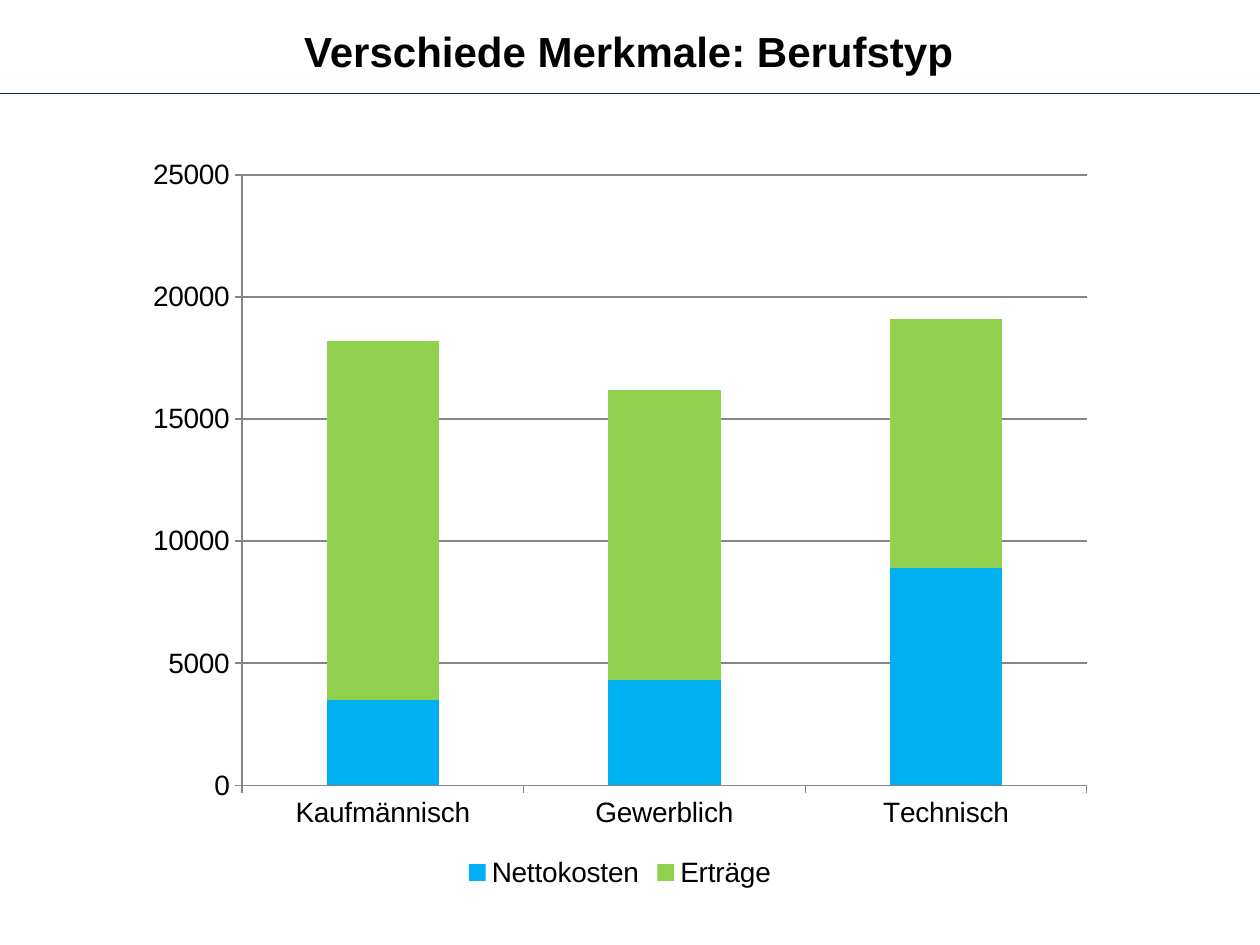
from dataclasses import dataclass

from lxml.etree import SubElement
from pptx import Presentation
from pptx.chart.data import CategoryChartData
from pptx.dml.color import RGBColor
from pptx.enum.chart import XL_CHART_TYPE, XL_LEGEND_POSITION, XL_TICK_MARK
from pptx.enum.shapes import MSO_CONNECTOR
from pptx.enum.text import MSO_ANCHOR, PP_ALIGN
from pptx.oxml.ns import qn
from pptx.util import Inches, Pt

TITLE = "Verschiede Merkmale: Berufstyp"
CATEGORIES = ["Kaufmännisch", "Gewerblich", "Technisch"]
SERIES = [
    ("Nettokosten", [3500, 4300, 8900], "00B0F0"),
    ("Erträge", [14700, 11900, 10200], "92D050"),
]
AXIS_TOP, AXIS_STEP = 25000, 5000

WIDTH, HEIGHT = 10, 7.5
TITLE_AREA = (0.66, 0.16, 8.66, 0.48)
CHART_AREA = (1.06, 1.15, 7.72, 5.94)
RULE_TOP = 0.74


@dataclass(frozen=True)
class Theme:
    font: str = "Arial"
    title_size: int = 24
    chart_size: int = 16
    text: str = "000000"
    rule: str = "142A56"
    grid: str = "868686"
    line_width: float = 0.75


THEME = Theme()


def set_font(font, size, bold=False):
    font.name = THEME.font
    font.size = Pt(size)
    font.bold = bold
    font.color.rgb = RGBColor.from_string(THEME.text)


def set_line(line, color):
    line.color.rgb = RGBColor.from_string(color)
    line.width = Pt(THEME.line_width)


def add_title(page):
    box = page.shapes.add_textbox(*map(Inches, TITLE_AREA))
    frame = box.text_frame
    frame.word_wrap = True
    frame.vertical_anchor = MSO_ANCHOR.MIDDLE
    paragraph = frame.paragraphs[0]
    paragraph.text = TITLE
    paragraph.alignment = PP_ALIGN.CENTER
    set_font(paragraph.font, THEME.title_size, bold=True)


def add_rule(page):
    top = Inches(RULE_TOP)
    rule = page.shapes.add_connector(
        MSO_CONNECTOR.STRAIGHT, 0, top, Inches(WIDTH), top
    )
    set_line(rule.line, THEME.rule)
    SubElement(rule.element.spPr, qn("a:effectLst"))


def add_cost_chart(page):
    data = CategoryChartData()
    data.categories = CATEGORIES
    for name, values, _ in SERIES:
        data.add_series(name, values)
    chart = page.shapes.add_chart(
        XL_CHART_TYPE.COLUMN_STACKED, *map(Inches, CHART_AREA), data
    ).chart
    chart.has_title = False
    set_font(chart.font, THEME.chart_size)

    plot = chart.plots[0]
    plot.gap_width, plot.overlap = 150, 100
    plot.vary_by_categories = False
    for series, (_, _, color) in zip(plot.series, SERIES):
        series.format.fill.solid()
        series.format.fill.fore_color.rgb = RGBColor.from_string(color)

    for axis in (chart.category_axis, chart.value_axis):
        axis.major_tick_mark = XL_TICK_MARK.OUTSIDE
        axis.minor_tick_mark = XL_TICK_MARK.NONE
        set_font(axis.tick_labels.font, THEME.chart_size)
        set_line(axis.format.line, THEME.grid)
    value_axis = chart.value_axis
    value_axis.minimum_scale, value_axis.maximum_scale = 0, AXIS_TOP
    value_axis.major_unit = AXIS_STEP
    value_axis.has_major_gridlines = True
    set_line(value_axis.major_gridlines.format.line, THEME.grid)

    chart.has_legend = True
    chart.legend.position = XL_LEGEND_POSITION.BOTTOM
    chart.legend.include_in_layout = False
    set_font(chart.legend.font, THEME.chart_size)


def main():
    deck = Presentation()
    deck.slide_width, deck.slide_height = Inches(WIDTH), Inches(HEIGHT)
    page = deck.slides.add_slide(deck.slide_layouts[6])
    add_rule(page)
    add_title(page)
    add_cost_chart(page)
    deck.save("out.pptx")


if __name__ == "__main__":
    main()
